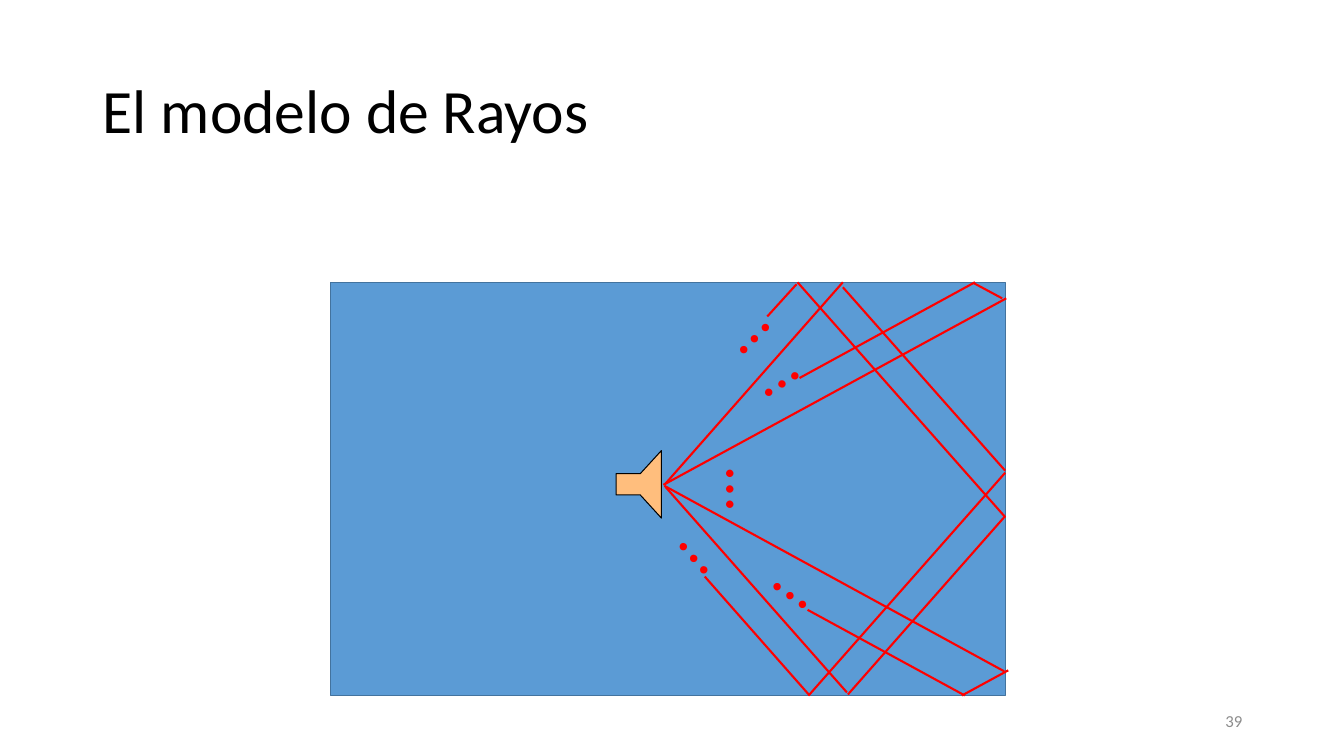
from pptx import Presentation
from pptx.dml.color import RGBColor
from pptx.enum.shapes import MSO_CONNECTOR as Connector, MSO_SHAPE as Preset
from pptx.enum.text import MSO_ANCHOR as Anchor, MSO_AUTO_SIZE as AutoSize, PP_ALIGN as Align
from pptx.oxml.ns import qn
from pptx.util import Emu, Pt
from lxml.etree import SubElement

PX = 9144
TITLE_ONLY = 5


def px(length):
    """Turn whole px, 100 to the inch, into EMU."""
    return Emu(length * PX)


def color(code):
    """Turn a hex string into a colour."""
    return RGBColor.from_string(code)


class RaySlide:
    """Holds the slide and its style, and draws each kind of element."""

    font = "Calibri"
    ray_color = "FF0000"

    def __init__(self, deck):
        """Add a title-only slide to the deck."""
        self.slide = deck.slides.add_slide(deck.slide_layouts[TITLE_ONLY])
        self.shapes = self.slide.shapes

    def fill_frame(self, frame, wording, size, ink, align=Align.LEFT, anchor=Anchor.TOP):
        """Put one run of text into a frame."""
        frame.word_wrap = True
        frame.auto_size = AutoSize.NONE
        frame.vertical_anchor = anchor
        paragraph = frame.paragraphs[0]
        paragraph.alignment = align
        run = paragraph.add_run()
        run.text = wording
        run.font.name, run.font.size = self.font, Pt(size)
        run.font.color.rgb = color(ink)
        return paragraph

    def title(self, wording, left, top, width, height):
        """Place and fill the title placeholder."""
        heading = self.shapes.title
        heading.left, heading.top = px(left), px(top)
        heading.width, heading.height = px(width), px(height)
        paragraph = self.fill_frame(heading.text_frame, wording, 44, "000000", anchor=Anchor.MIDDLE)
        paragraph.line_spacing = 0.9

    def text(self, wording, left, top, width, height, size, ink, rotation=0, **layout):
        """Add a text box, turned if asked."""
        box = self.shapes.add_textbox(px(left), px(top), px(width), px(height))
        box.rotation = rotation
        self.fill_frame(box.text_frame, wording, size, ink, **layout)

    def paint(self, shape, fill, edge, weight):
        """Give a shape its fill and outline without shadow."""
        shape.shadow.inherit = False
        shape.fill.solid()
        shape.fill.fore_color.rgb = color(fill)
        shape.line.color.rgb = color(edge)
        shape.line.width = Pt(weight)

    def room(self, left, top, width, height):
        """Add the rectangular room."""
        walls = self.shapes.add_shape(Preset.RECTANGLE, px(left), px(top), px(width), px(height))
        self.paint(walls, "5B9BD5", "43739E", 1)

    def speaker(self, outline):
        """Add the loudspeaker from its corner points."""
        builder = self.shapes.build_freeform(*outline[0], scale=PX)
        builder.add_line_segments(outline[1:], close=True)
        self.paint(builder.convert_to_shape(), "FFBE7D", "000000", 0.75)

    def ray(self, start, end):
        """Add one straight stretch of a ray."""
        stretch = self.shapes.add_connector(Connector.STRAIGHT, *map(px, start + end))
        stretch.line.color.rgb = color(self.ray_color)
        stretch.line.width = Pt(1.5)
        SubElement(stretch._element.spPr, qn("a:effectLst"))

    def dots(self, left, top, rotation):
        """Add a turned ellipsis that continues a ray."""
        self.text("…", left, top, 39, 83, 44, self.ray_color, rotation)


RAYS = [
    ((660, 483), (840, 687)), ((997, 512), (841, 689)),
    ((997, 513), (791, 280)), ((761, 314), (790, 282)),
    ((659, 482), (996, 666)), ((1000, 665), (954, 690)),
    ((957, 690), (801, 605)),
    ((658, 481), (998, 296)), ((994, 296), (966, 281)),
    ((967, 280), (793, 375)),
    ((659, 481), (836, 280)), ((997, 467), (836, 285)),
    ((802, 690), (997, 469)), ((803, 690), (699, 572)),
]
CONTINUATIONS = [
    (706, 288, 314.4), (761, 574, 215), (777, 352, 147.8),
    (660, 535, 228.6), (683, 455, 270),
]
SPEAKER = [(611, 470), (635, 470), (656, 447), (656, 514), (635, 491), (611, 491)]


def main():
    """Build and save the slide."""
    deck = Presentation()
    deck.slide_width, deck.slide_height = px(1333), px(750)
    page = RaySlide(deck)
    page.room(328, 280, 669, 410)
    page.title("El modelo de Rayos", 92, 40, 1150, 145)
    page.speaker(SPEAKER)
    for start, end in RAYS:
        page.ray(start, end)
    for left, top, rotation in CONTINUATIONS:
        page.dots(left, top, rotation)
    page.text("39", 942, 695, 300, 40, 12, "8C8C8C", align=Align.RIGHT, anchor=Anchor.MIDDLE)
    deck.save("out.pptx")


if __name__ == "__main__":
    main()
